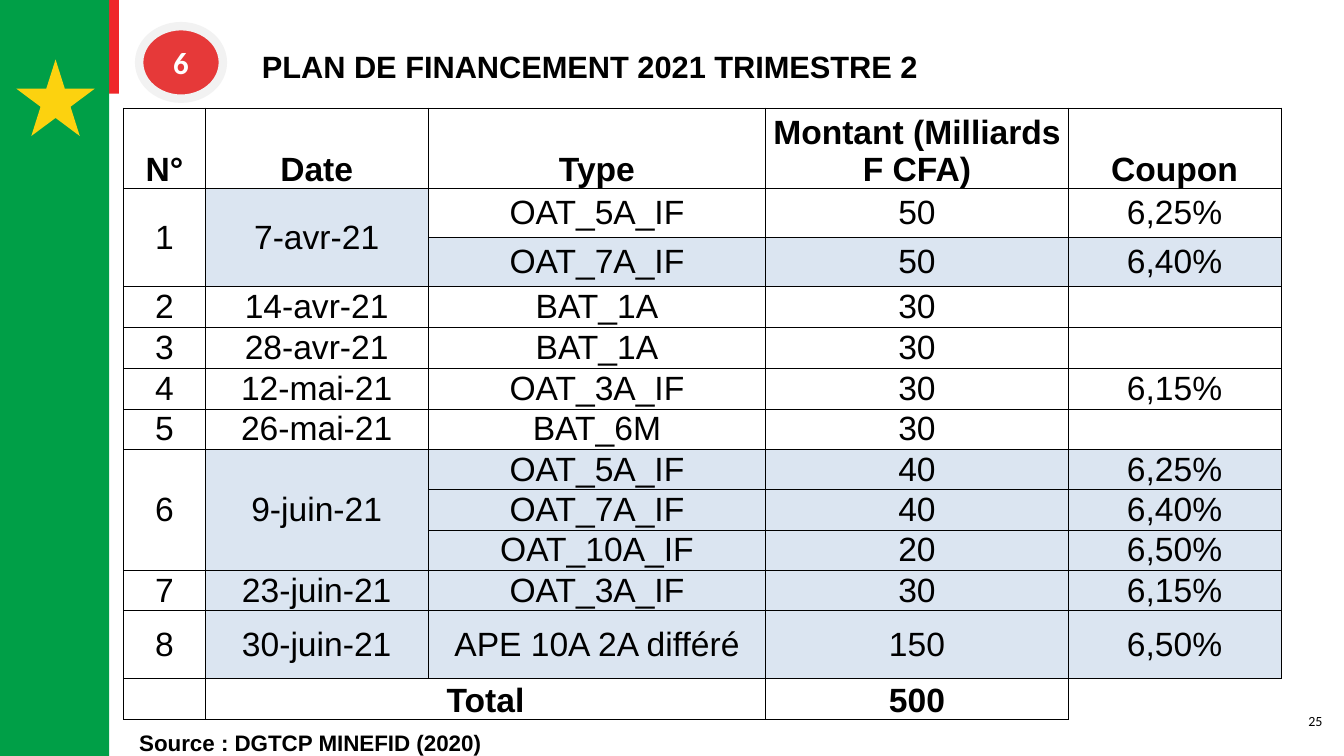
from pptx import Presentation
from pptx.dml.color import RGBColor
from pptx.enum.shapes import MSO_SHAPE
from pptx.enum.text import MSO_ANCHOR, PP_ALIGN
from pptx.oxml.ns import qn
from pptx.util import Pt
from lxml import etree

RECTANGLE, STAR, OVAL = MSO_SHAPE.RECTANGLE, MSO_SHAPE.STAR_5_POINT, MSO_SHAPE.OVAL
TOP, MIDDLE, BOTTOM = MSO_ANCHOR.TOP, MSO_ANCHOR.MIDDLE, MSO_ANCHOR.BOTTOM
LEFT, CENTER, RIGHT = PP_ALIGN.LEFT, PP_ALIGN.CENTER, PP_ALIGN.RIGHT

BLACK = RGBColor(0x00, 0x00, 0x00)
WHITE = RGBColor(0xFF, 0xFF, 0xFF)
GREEN = RGBColor(0x00, 0x9F, 0x47)
RED = RGBColor(0xEF, 0x27, 0x29)
YELLOW = RGBColor(0xFC, 0xD2, 0x0F)
BADGE_RED = RGBColor(0xE6, 0x39, 0x39)
BADGE_RING = RGBColor(0xF2, 0xF2, 0xF2)
PALE_BLUE = RGBColor(0xDB, 0xE5, 0xF1)

HEADINGS = ["N°", "Date", "Type", "Montant (Milliards F CFA)", "Coupon"]
# Date, date shaded, then tranches: type, amount, coupon, shaded, row height
ISSUES = [
    ("7-avr-21", True, [("OAT_5A_IF", "50", "6,25%", False, 35),
                        ("OAT_7A_IF", "50", "6,40%", True, 35)]),
    ("14-avr-21", False, [("BAT_1A", "30", "", False, 26.8)]),
    ("28-avr-21", False, [("BAT_1A", "30", "", False, 29.6)]),
    ("12-mai-21", False, [("OAT_3A_IF", "30", "6,15%", False, 26.8)]),
    ("26-mai-21", False, [("BAT_6M", "30", "", False, 26.8)]),
    ("9-juin-21", True, [("OAT_5A_IF", "40", "6,25%", True, 26.8),
                         ("OAT_7A_IF", "40", "6,40%", True, 26.8),
                         ("OAT_10A_IF", "20", "6,50%", True, 26.8)]),
    ("23-juin-21", True, [("OAT_3A_IF", "30", "6,15%", True, 26.8)]),
    ("30-juin-21", True, [("APE 10A 2A différé", "150", "6,50%", True, 48.7)]),
]
COLUMN_WIDTHS = [58.2, 159.2, 241.2, 216, 152]
HEADER_HEIGHT, TOTAL_HEIGHT = 53.6, 26.8


def style_paragraph(paragraph, size, color=BLACK, bold=False, font="Arial", align=LEFT):
    paragraph.alignment = align
    paragraph.font.name = font
    paragraph.font.size = Pt(size)
    paragraph.font.bold = bold
    paragraph.font.color.rgb = color


def add_filled(slide, preset, left, top, width, height, color):
    shape = slide.shapes.add_shape(preset, Pt(left), Pt(top), Pt(width), Pt(height))
    shape.shadow.inherit = False
    shape.fill.solid()
    shape.fill.fore_color.rgb = color
    shape.line.fill.background()
    return shape


def add_label(slide, text, left, top, width, height, insets=(0, 0, 0, 0),
              anchor=MIDDLE, **style):
    label = slide.shapes.add_textbox(Pt(left), Pt(top), Pt(width), Pt(height))
    frame = label.text_frame
    frame.word_wrap = True
    frame.vertical_anchor = anchor
    frame.margin_left, frame.margin_top, frame.margin_right, frame.margin_bottom = map(Pt, insets)
    frame.text = text
    style_paragraph(frame.paragraphs[0], **style)


def add_flag_band(slide, left, top, width, height):
    add_filled(slide, RECTANGLE, left + width - 4.5, top, 11.5, 67, RED)
    add_filled(slide, RECTANGLE, left, top, width, height, GREEN)
    add_filled(slide, STAR, left + 11.7, top + 42.5, 56, 54.7, YELLOW)


def add_title(slide, number, title, left, top, width, height):
    """Numbered badge at the left of the box, title in the rest."""
    badge_width, title_offset = 59.8, 80.6
    add_label(slide, title, left + title_offset, top, width - title_offset, height,
              insets=(7.2, 8.6, 7.2, 3.6), size=22, bold=True)
    badge = add_filled(slide, OVAL, left, top, badge_width, height, BADGE_RED)
    badge.line.color.rgb = BADGE_RING
    badge.line.width = Pt(6)
    badge.text_frame.text = number
    badge.text_frame.vertical_anchor = MIDDLE
    style_paragraph(badge.text_frame.paragraphs[0], 22, WHITE, True, "Calibri", CENTER)


def set_borders(cell, visible_sides):
    properties = cell._tc.get_or_add_tcPr()
    for index, side in enumerate("LRTB"):
        border = etree.Element(qn(f"a:ln{side}"), w=str(Pt(0.5)))
        if side in visible_sides:
            paint = etree.SubElement(border, qn("a:solidFill"))
            etree.SubElement(paint, qn("a:srgbClr"), val=str(BLACK))
        else:
            etree.SubElement(border, qn("a:noFill"))
        properties.insert(index, border)


def fill_cell(cell, text, color=WHITE, bold=False, anchor=MIDDLE):
    cell.margin_left = cell.margin_right = cell.margin_top = cell.margin_bottom = 0
    cell.vertical_anchor = anchor
    cell.fill.solid()
    cell.fill.fore_color.rgb = color
    cell.text = text
    style_paragraph(cell.text_frame.paragraphs[0], 24, bold=bold, align=CENTER)


def add_financing_table(slide, left, top):
    heights = [HEADER_HEIGHT]
    heights += [tranche[-1] for _, _, tranches in ISSUES for tranche in tranches]
    heights.append(TOTAL_HEIGHT)
    table = slide.shapes.add_table(len(heights), len(COLUMN_WIDTHS), Pt(left), Pt(top),
                                   Pt(sum(COLUMN_WIDTHS)), Pt(sum(heights))).table
    table.first_row = table.horz_banding = False
    for column, width in zip(table.columns, COLUMN_WIDTHS):
        column.width = Pt(width)
    for row, height in zip(table.rows, heights):
        row.height = Pt(height)

    for column, heading in enumerate(HEADINGS):
        fill_cell(table.cell(0, column), heading, bold=True, anchor=BOTTOM)

    row = 1
    for number, (date, date_shaded, tranches) in enumerate(ISSUES, 1):
        fill_cell(table.cell(row, 0), str(number))
        fill_cell(table.cell(row, 1), date, PALE_BLUE if date_shaded else WHITE)
        if len(tranches) > 1:
            for column in (0, 1):
                table.cell(row, column).merge(table.cell(row + len(tranches) - 1, column))
        for *values, shaded, _ in tranches:
            for column, value in enumerate(values, 2):
                fill_cell(table.cell(row, column), value, PALE_BLUE if shaded else WHITE)
            row += 1

    for column, value in enumerate(["", "Total", "", "500", ""]):
        fill_cell(table.cell(row, column), value, bold=True, anchor=BOTTOM)
    table.cell(row, 1).merge(table.cell(row, 2))

    outside_total = table.cell(row, len(COLUMN_WIDTHS) - 1)
    outside_total.fill.background()
    for cell in table.iter_cells():
        set_borders(cell, "LT" if cell == outside_total else "LRTB")


def main():
    presentation = Presentation()
    presentation.slide_width, presentation.slide_height = Pt(960), Pt(540)
    slide = presentation.slides.add_slide(presentation.slide_layouts[6])
    add_flag_band(slide, 0, 0, 78, 540)
    add_label(slide, "25", 706.3, 500.6, 238.3, 28.8, size=10, font="Calibri", align=RIGHT)
    add_title(slide, "6", "PLAN DE FINANCEMENT 2021 TRIMESTRE 2", 99.4, 18.7, 851, 51.8)
    add_financing_table(slide, 88.4, 77.2)
    add_label(slide, "Source : DGTCP MINEFID (2020)", 99.4, 520.8, 262, 26,
              insets=(0, 0, 7.2, 0), anchor=TOP, size=16, bold=True)
    presentation.save("out.pptx")


if __name__ == "__main__":
    main()
